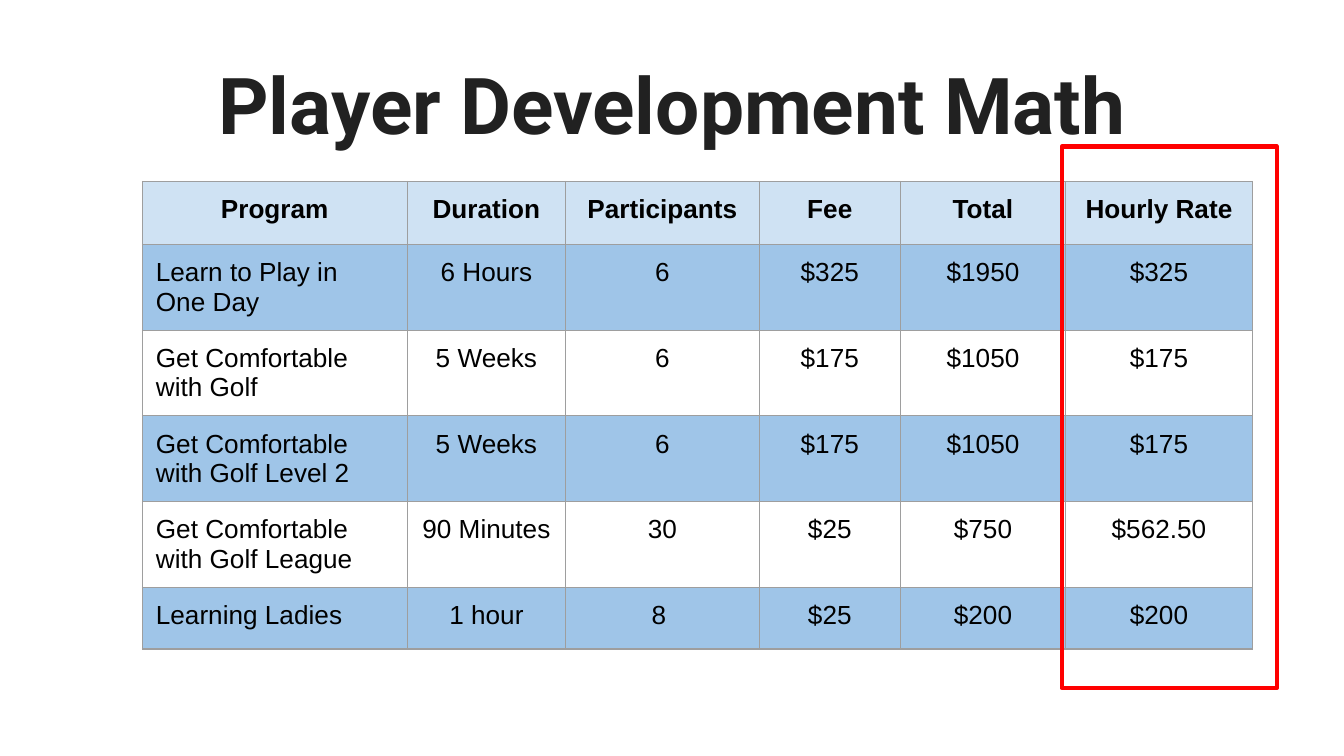
from lxml import etree
from pptx import Presentation
from pptx.dml.color import RGBColor
from pptx.enum.shapes import MSO_SHAPE
from pptx.enum.text import MSO_ANCHOR, PP_ALIGN
from pptx.oxml.ns import qn
from pptx.util import Inches, Pt

PROCESS = MSO_SHAPE.FLOWCHART_PROCESS
TOP = MSO_ANCHOR.TOP
LEFT, CENTER = PP_ALIGN.LEFT, PP_ALIGN.CENTER

INSET = Inches(0.1)
COL_WIDTHS = [1.97, 1.18, 1.44, 1.05, 1.23, 1.39]
HEADER_HEIGHT, ROW_HEIGHT = 0.47, 0.46
HEADER_FILL, BAND_FILL, BORDER = "CFE2F3", "9FC5E8", "9E9E9E"

PROGRAMS = [
    ["Program", "Duration", "Participants", "Fee", "Total", "Hourly Rate"],
    ["Learn to Play in One Day", "6 Hours", "6", "$325", "$1950", "$325"],
    ["Get Comfortable with Golf", "5 Weeks", "6", "$175", "$1050", "$175"],
    ["Get Comfortable with Golf Level 2", "5 Weeks", "6", "$175", "$1050", "$175"],
    ["Get Comfortable with Golf League", "90 Minutes", "30", "$25", "$750", "$562.50"],
    ["Learning Ladies", "1 hour", "8 ", "$25", "$200", "$200"],
]


def rgb(color):
    return RGBColor.from_string(color)


def set_insets(item):
    item.margin_left = item.margin_right = INSET
    item.margin_top = item.margin_bottom = INSET


def add_run(p, text, font, size, color, bold):
    r = p.add_run()
    r.text = text
    r.font.name = font
    r.font.size = Pt(size)
    r.font.bold = bold
    r.font.color.rgb = rgb(color)


def add_title(slide, text, x, y, w, h):
    sp = slide.shapes.title
    sp.left, sp.top, sp.width, sp.height = (Inches(v) for v in (x, y, w, h))
    tf = sp.text_frame
    tf.word_wrap = True
    tf.vertical_anchor = TOP
    set_insets(tf)
    p = tf.paragraphs[0]
    p.alignment = CENTER
    p.line_spacing = 1.0
    add_run(p, text, "Roboto", 42, "212121", True)


def set_borders(cell, color, width):
    tc_pr = cell._tc.get_or_add_tcPr()
    for side in ("a:lnL", "a:lnR", "a:lnT", "a:lnB"):
        ln = etree.SubElement(tc_pr, qn(side), w=str(Pt(width)))
        fill = etree.SubElement(ln, qn("a:solidFill"))
        etree.SubElement(fill, qn("a:srgbClr"), val=color)


def format_cell(cell, text, row, col):
    set_insets(cell)
    cell.vertical_anchor = TOP
    set_borders(cell, BORDER, 0.75)

    # Header, then alternating blue and clear rows
    if row % 2 or row == 0:
        cell.fill.solid()
        cell.fill.fore_color.rgb = rgb(BAND_FILL if row else HEADER_FILL)
    else:
        cell.fill.background()

    p = cell.text_frame.paragraphs[0]
    p.alignment = LEFT if row and col == 0 else CENTER
    add_run(p, text, "Arial", 14, "000000", row == 0)


def add_program_table(slide, rows, x, y, w, h):
    frame = slide.shapes.add_table(len(rows), len(COL_WIDTHS), Inches(x),
                                   Inches(y), Inches(w), Inches(h))
    table = frame.table
    table.first_row = table.horz_banding = False
    for column, width in zip(table.columns, COL_WIDTHS):
        column.width = Inches(width)
    for i, values in enumerate(rows):
        table.rows[i].height = Inches(ROW_HEIGHT if i else HEADER_HEIGHT)
        for j, text in enumerate(values):
            format_cell(table.cell(i, j), text, i, j)
    # Setting row heights resizes the frame
    frame.width, frame.height = Inches(w), Inches(h)


def add_highlight(slide, x, y, w, h):
    sp = slide.shapes.add_shape(PROCESS, Inches(x), Inches(y), Inches(w), Inches(h))
    sp.shadow.inherit = False
    sp.fill.background()
    sp.line.color.rgb = rgb("FF0000")
    sp.line.width = Pt(2.25)


def main():
    prs = Presentation()
    # Widescreen, 16:9
    prs.slide_width = Inches(10)
    prs.slide_height = prs.slide_width * 9 // 16
    slide = prs.slides.add_slide(prs.slide_layouts[5])

    # Title
    add_title(slide, "Player Development Math", 0.34, 0.32, 9.32, 0.88)
    # Program figures
    add_program_table(slide, PROGRAMS, 1.06, 1.35, 8.25, 3.6)
    # Frame around the hourly rates
    add_highlight(slide, 7.9, 1.09, 1.6, 4.03)

    prs.save("out.pptx")


if __name__ == "__main__":
    main()
